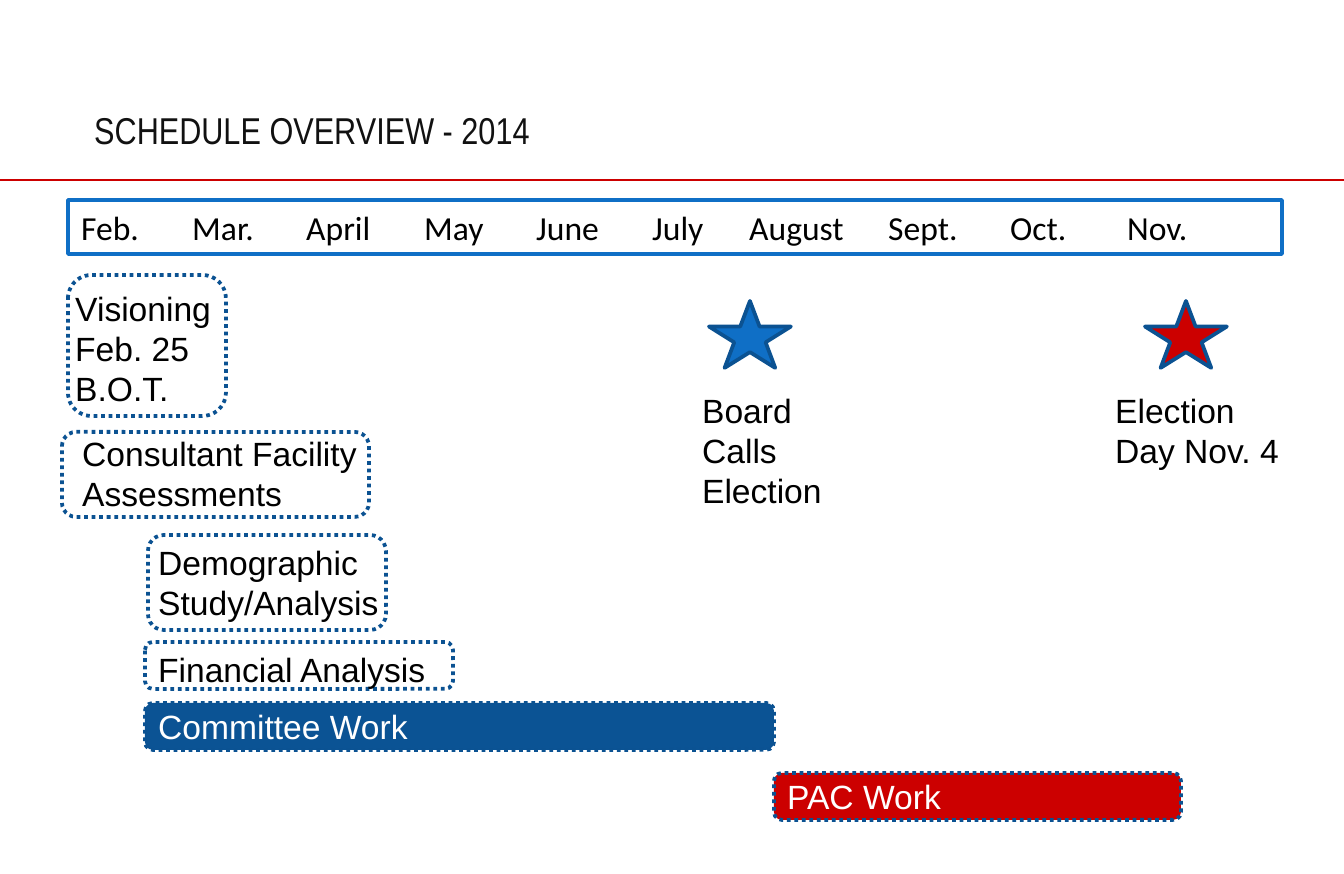
from pptx import Presentation
from pptx.dml.color import RGBColor
from pptx.enum.dml import MSO_LINE
from pptx.enum.shapes import MSO_CONNECTOR, MSO_SHAPE
from pptx.enum.text import MSO_ANCHOR, PP_ALIGN
from pptx.util import Pt
from lxml.etree import SubElement
from pptx.oxml.ns import qn

PX = 914400 / 134.4
HUE = {
    "white": "FFFFFF", "black": "000000", "ink": "111111", "red": "CC0000",
    "blue": "0F6FC6", "navy": "0B5394", "edge": "0B5292",
}


def emu(*nums):
    return [round(n * PX) for n in nums]


def write(item, text, font="Arial", size=18, hue="black", lead=None, anchor=MSO_ANCHOR.TOP):
    frame = item.text_frame
    frame.word_wrap = True
    frame.vertical_anchor = anchor
    frame.text = text
    for para in frame.paragraphs:
        para.alignment = PP_ALIGN.LEFT
        if lead:
            para.line_spacing = Pt(lead)
        para.font.name = font
        para.font.size = Pt(size)
        para.font.color.rgb = RGBColor.from_string(HUE[hue])
        for run in para.runs:
            run.font.name = font
            run.font.size = Pt(size)
            run.font.color.rgb = RGBColor.from_string(HUE[hue])


deck = Presentation()
deck.slide_width, deck.slide_height = emu(1344, 874)
slide = deck.slides.add_slide(deck.slide_layouts[6])
shapes = slide.shapes

rule = shapes.add_connector(MSO_CONNECTOR.STRAIGHT, *emu(0, 180, 1344, 180))
rule.line.color.rgb = RGBColor.from_string(HUE["red"])
rule.line.width = Pt(1)
SubElement(rule._element.spPr, qn("a:effectLst"))

title = shapes.add_textbox(*emu(81, 13, 751, 146))
write(title, "SCHEDULE OVERVIEW - 2014", font="Arial Narrow", size=20, hue="ink", anchor=MSO_ANCHOR.BOTTOM)

ROUND, STAR, RECT = MSO_SHAPE.ROUNDED_RECTANGLE, MSO_SHAPE.STAR_5_POINT, MSO_SHAPE.RECTANGLE
parts = [
    (ROUND, 145, 703, 629, 47, "navy", "edge"),
    (ROUND, 68, 275, 158, 141, None, "edge"),
    (ROUND, 62, 432, 307, 85, None, "edge"),
    (ROUND, 148, 535, 238, 95, None, "edge"),
    (ROUND, 145, 642, 308, 47, None, "edge"),
    (ROUND, 774, 773, 407, 47, "red", "edge"),
    (STAR, 709, 301, 82, 67, "blue", "edge"),
    (STAR, 1145, 301, 82, 67, "red", "edge"),
    (RECT, 68, 200, 1214, 54, "white", "blue"),
]
for kind, left, top, width, height, fill, edge in parts:
    part = shapes.add_shape(kind, *emu(left, top, width, height))
    part.shadow.inherit = False
    if fill:
        part.fill.solid()
        part.fill.fore_color.rgb = RGBColor.from_string(HUE[fill])
    else:
        part.fill.background()
    part.line.color.rgb = RGBColor.from_string(HUE[edge])
    part.line.width = Pt(2)
    if kind == ROUND:
        part.line.dash_style = MSO_LINE.ROUND_DOT
    if kind == RECT:
        band = part

months = {
    "Feb.": 81, "Mar.": 192, "April": 306, "May": 424, "June": 536,
    "July": 652, "August": 749, "Sept.": 888, "Oct.": 1010, "Nov.": 1127,
}
write(band, "\t".join(months), font="Calibri", anchor=MSO_ANCHOR.MIDDLE)
props = band.text_frame.paragraphs[0]._p.get_or_add_pPr()
tabs = SubElement(props, qn("a:tabLst"))
for spot in list(months.values())[1:]:
    SubElement(tabs, qn("a:tab"), pos=str(emu(spot - 81)[0]), algn="l")
props.insert_element_before(tabs, "a:defRPr", "a:extLst")

labels = [
    ("Visioning\nFeb. 25\nB.O.T.", 62, 281, 173, 136, "black"),
    ("Consultant Facility\nAssessments", 69, 426, 313, 136, "black"),
    ("Demographic\nStudy/Analysis", 145, 535, 339, 136, "black"),
    ("Financial Analysis", 145, 642, 297, 95, "black"),
    ("Committee Work", 145, 699, 280, 95, "white"),
    ("Board Calls Election", 689, 383, 169, 136, "black"),
    ("Election Day Nov. 4", 1102, 383, 199, 95, "black"),
    ("PAC Work", 774, 769, 183, 95, "white"),
]
for text, left, top, width, height, hue in labels:
    label = shapes.add_textbox(*emu(left, top, width, height))
    write(label, text, hue=hue, lead=21.6)

deck.save("out.pptx")
